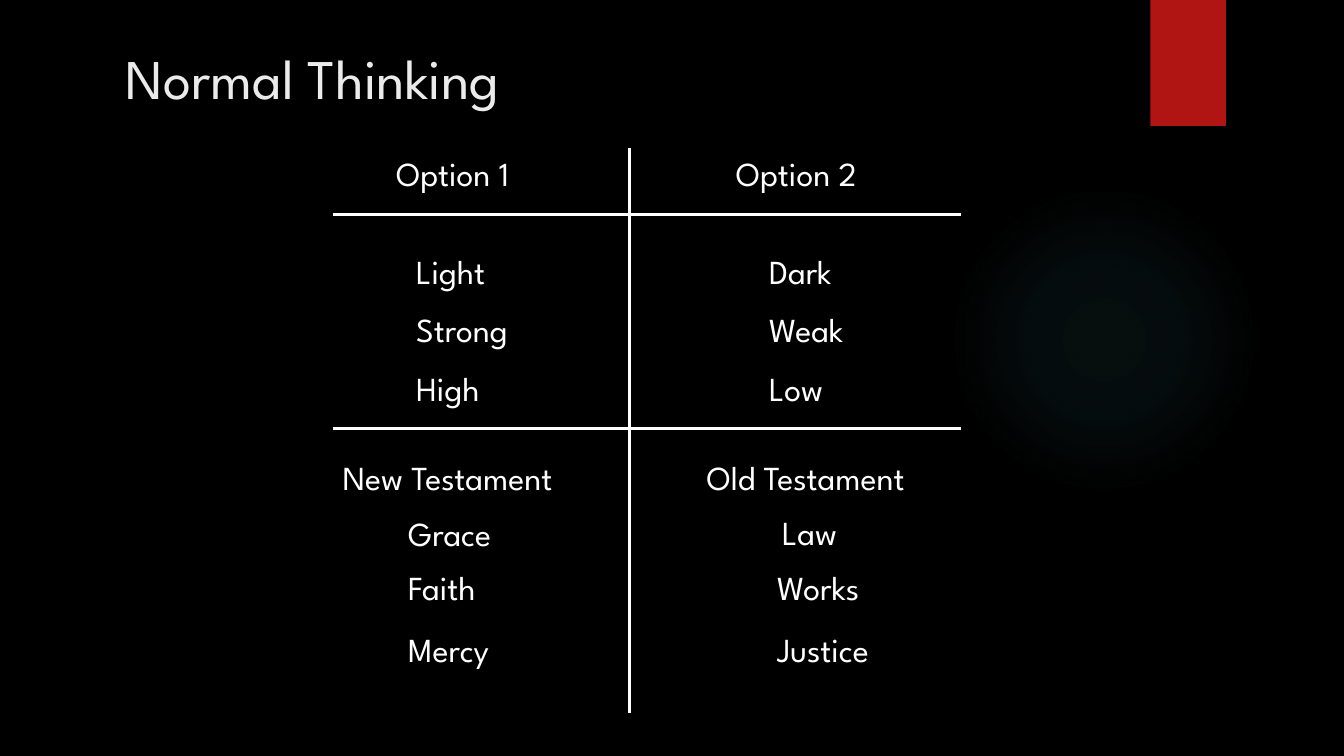
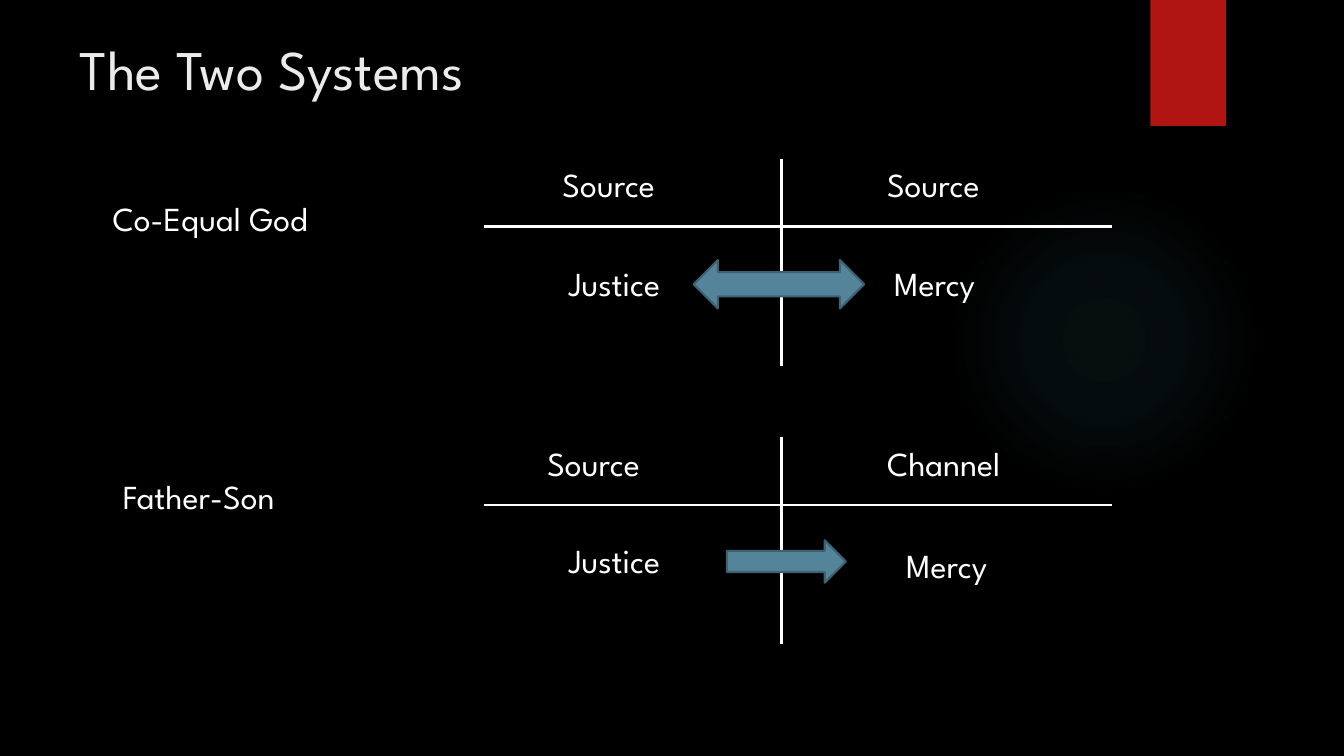
from dataclasses import dataclass

from lxml import etree
from pptx import Presentation
from pptx.dml.color import RGBColor
from pptx.enum.shapes import MSO_CONNECTOR, MSO_SHAPE
from pptx.enum.text import MSO_ANCHOR, MSO_AUTO_SIZE
from pptx.oxml import parse_xml
from pptx.oxml.ns import nsdecls, qn
from pptx.slide import Slide
from pptx.util import Emu, Pt

RECT, OVAL = MSO_SHAPE.RECTANGLE, MSO_SHAPE.OVAL
BOTH, RIGHT = MSO_SHAPE.LEFT_RIGHT_ARROW, MSO_SHAPE.RIGHT_ARROW
STRAIGHT = MSO_CONNECTOR.STRAIGHT
TOP = MSO_ANCHOR.TOP
GROW, FIXED = MSO_AUTO_SIZE.SHAPE_TO_FIT_TEXT, MSO_AUTO_SIZE.NONE

COLORS = {
    "back": "000000",
    "title": "EBEBEB",
    "text": "FFFFFF",
    "tab": "B01513",
    "glow": "50B9C1",
    "arrow": "54849A",
    "edge": "3E6272",
}
FONT = "League Spartan"
SCALE = 9144  # EMU in one px, 100 px to the inch
ROW = 50  # height of a one-line label
SPAN = 623  # length of every horizontal rule


@dataclass(frozen=True)
class Box:
    x: int
    y: int
    w: int
    h: int = ROW

    def emu(self) -> tuple[Emu, Emu, Emu, Emu]:
        return px(self.x), px(self.y), px(self.w), px(self.h)


@dataclass(frozen=True)
class Label:
    text: str
    box: Box


@dataclass(frozen=True)
class Cross:
    """One upright rule crossed by horizontal rules."""
    left: int
    mid: int
    top: int
    end: int
    rules: tuple[int, ...]


@dataclass(frozen=True)
class Arrow:
    kind: MSO_SHAPE
    box: Box


@dataclass(frozen=True)
class Page:
    title: Label
    crosses: list[Cross]
    labels: list[Label]
    arrows: list[Arrow]


def px(n: int) -> Emu:
    return Emu(n * SCALE)


def color(name: str) -> RGBColor:
    return RGBColor.from_string(COLORS[name])


def write(slide: Slide, label: Label, size: int = 24,
          tint: str = "text", wrap: bool = False) -> None:
    frame = slide.shapes.add_textbox(*label.box.emu()).text_frame
    frame.word_wrap = wrap
    frame.auto_size = FIXED if wrap else GROW
    frame.vertical_anchor = TOP
    run = frame.paragraphs[0].add_run()
    run.text = label.text
    run.font.name = FONT
    run.font.size = Pt(size)
    run.font.color.rgb = color(tint)


def shape(slide: Slide, kind: MSO_SHAPE, box: Box, fill: str, edge: str = ""):
    item = slide.shapes.add_shape(kind, *box.emu())
    item.shadow.inherit = False
    item.fill.solid()
    item.fill.fore_color.rgb = color(fill)
    if edge:
        item.line.color.rgb = color(edge)
        item.line.width = Pt(1.5)
    else:
        item.line.fill.background()
    return item


def glow(slide: Slide, box: Box) -> None:
    """Draw a round, nearly clear light that fades out."""
    props = shape(slide, OVAL, box, "glow").element.spPr
    stops = "".join(
        f'<a:gs pos="{pos * 1000}"><a:srgbClr val="{COLORS["glow"]}">'
        f'<a:alpha val="{alpha * 1000}"/></a:srgbClr></a:gs>'
        for pos, alpha in ((0, 7), (36, 6), (69, 0)))
    fade = parse_xml(
        f'<a:gradFill {nsdecls("a")} rotWithShape="1"><a:gsLst>{stops}</a:gsLst>'
        '<a:path path="circle">'
        '<a:fillToRect l="50000" t="50000" r="50000" b="50000"/>'
        '</a:path></a:gradFill>')
    props.replace(props.find(qn("a:solidFill")), fade)


def line(slide: Slide, x1: int, y1: int, x2: int, y2: int) -> None:
    item = slide.shapes.add_connector(STRAIGHT, px(x1), px(y1), px(x2), px(y2))
    item.line.color.rgb = color("text")
    item.line.width = Pt(2)
    etree.SubElement(item.element.spPr, qn("a:effectLst"))


def cross(slide: Slide, grid: Cross) -> None:
    for y in grid.rules:
        line(slide, grid.left, y, grid.left + SPAN, y)
    line(slide, grid.mid, grid.top, grid.mid, grid.end)


def draw(slide: Slide, page: Page) -> None:
    glow(slide, Box(941, 183, 308, 308))
    shape(slide, RECT, Box(1141, 0, 75, 125), "tab")
    write(slide, page.title, 40, "title", True)
    for grid in page.crosses:
        cross(slide, grid)
    for label in page.labels:
        write(slide, label)
    for arrow in page.arrows:
        shape(slide, arrow.kind, arrow.box, "arrow", "edge")


def column(x: int, *rows: tuple[str, int, int]) -> list[Label]:
    """Labels with one left edge, from (text, top, width) rows."""
    return [Label(text, Box(x, y, w)) for text, y, w in rows]


PAGES = [
    Page(
        Label("Normal Thinking", Box(115, 38, 1098, 115)),
        [Cross(330, 624, 147, 707, (213, 425))],
        column(383, ("Option 1", 147, 161))
        + column(720, ("Option 2", 147, 161))
        + column(403, ("Light", 244, 97), ("Strong", 302, 124), ("High", 360, 93))
        + column(753, ("Dark", 244, 95), ("Weak", 302, 114), ("Low", 360, 86))
        + column(330, ("New Testament", 448, 274))
        + column(691, ("Old Testament", 448, 258))
        + column(395, ("Grace", 504, 126), ("Faith", 558, 98), ("Mercy", 619, 123))
        + column(766, ("Law", 503, 87))
        + column(761, ("Works", 558, 115), ("Justice", 619, 132)),
        [],
    ),
    Page(
        Label("The Two Systems", Box(69, 29, 808, 115)),
        [Cross(480, 775, y, y + 205, (y + 67,)) for y in (158, 434)],
        column(102, ("Co-Equal God", 191, 256))
        + column(112, ("Father-Son", 467, 203))
        + column(548, ("Source", 158, 143))
        + column(533, ("Source", 434, 143))
        + column(554, ("Justice", 256, 132), ("Justice", 531, 132))
        + column(870, ("Source", 158, 133), ("Channel", 434, 161))
        + column(877, ("Mercy", 256, 123))
        + column(889, ("Mercy", 536, 123)),
        [Arrow(BOTH, Box(688, 258, 169, 48)),
         Arrow(RIGHT, Box(721, 536, 118, 42))],
    ),
]


def main() -> None:
    deck = Presentation()
    deck.slide_width, deck.slide_height = px(1333), px(750)
    back = deck.slide_master.background.fill
    back.solid()
    back.fore_color.rgb = color("back")
    for page in PAGES:
        draw(deck.slides.add_slide(deck.slide_layouts[6]), page)
    deck.save("out.pptx")


if __name__ == "__main__":
    main()
